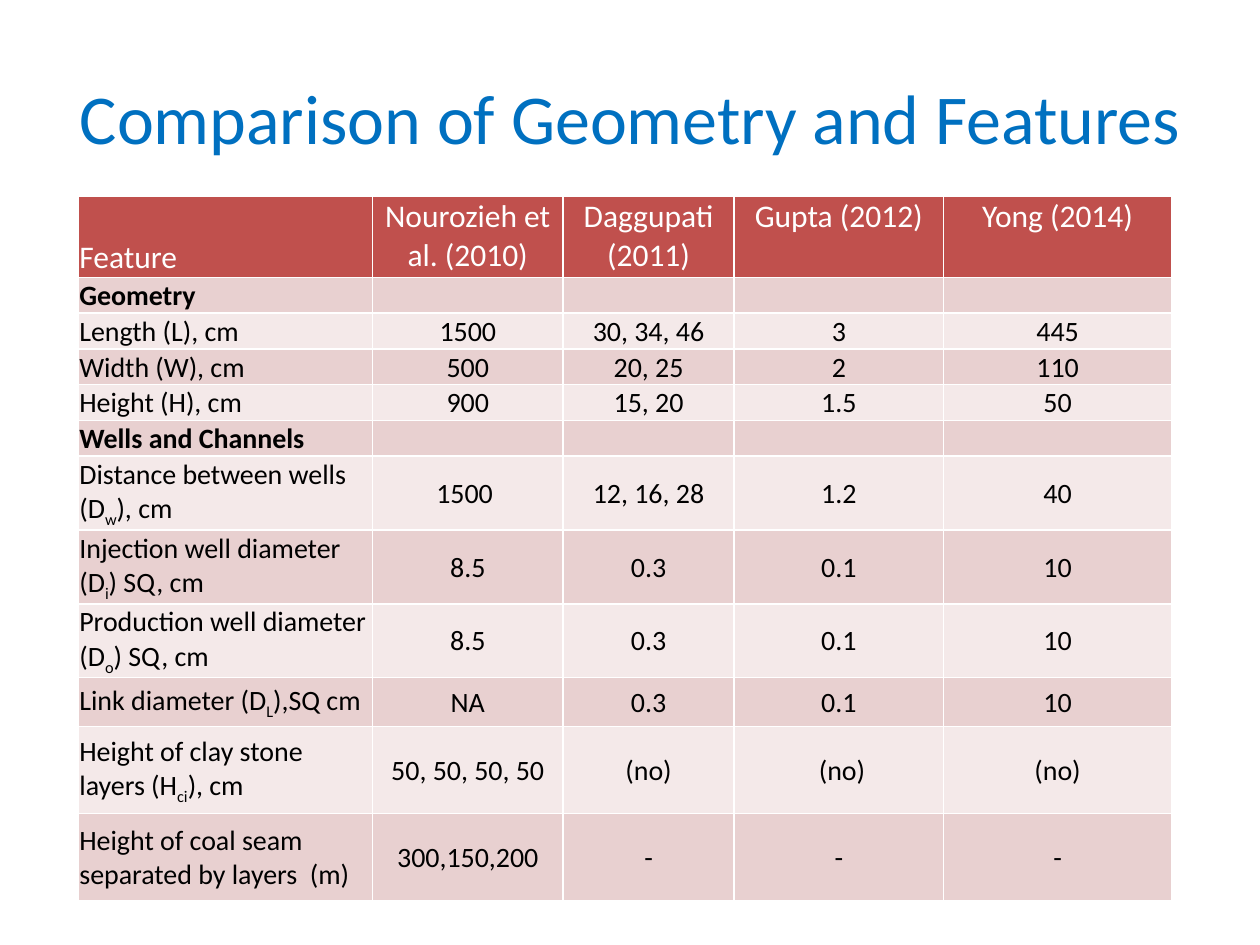
import pptx
import pptx.dml.color
import pptx.enum.text
import pptx.util
from lxml import etree
from pptx.oxml.ns import qn

Cm = pptx.util.Cm
ALIGN = pptx.enum.text.PP_ALIGN
ANCHOR = pptx.enum.text.MSO_ANCHOR

WHITE, BLACK, BLUE = "FFFFFF", "000000", "0070C0"
HEADER_FILL = "C0504D"
BAND_FILLS = ("E8D0D0", "F4E9E9")

COLUMN_WIDTHS = (5.94, 3.84, 3.45, 4.22, 4.6)
HEADER = ("Feature", "Nourozieh et al. (2010)", "Daggupati (2011)",
          "Gupta (2012)", "Yong (2014)")
SINGLE, DOUBLE, LINK, TALL = 0.71, 1.45, 0.99, 1.75

# Row height followed by the cells; text between bars is subscript
BODY = (
    (SINGLE, "Geometry", "", "", "", ""),
    (SINGLE, "Length (L), cm", "1500", "30, 34, 46", "3", "445"),
    (SINGLE, "Width (W), cm", "500", "20, 25", "2", "110"),
    (SINGLE, "Height (H), cm", "900", "15, 20", "1.5", "50"),
    (SINGLE, "Wells and Channels", "", "", "", ""),
    (DOUBLE, "Distance between wells (D|w|), cm", "1500 ", "12, 16, 28", "1.2", "40"),
    (DOUBLE, "Injection well diameter (D|i|) SQ, cm", "8.5", "0.3", "0.1", "10"),
    (DOUBLE, "Production well diameter (D|o|) SQ, cm", "8.5", "0.3", "0.1", "10"),
    (LINK, "Link diameter (D|L|),SQ cm", "NA", "0.3", "0.1", "10"),
    (TALL, "Height of clay stone layers (H|ci|), cm", "50, 50, 50, 50",
     "(no)", " (no)", "(no)"),
    (TALL, "Height of coal seam separated by layers  (m)", "300,150,200",
     "-", "-", "-"),
)


def rgb(color):
    return pptx.dml.color.RGBColor.from_string(color)


def write_text(frame, text, size=16, color=BLACK, bold=False, align=ALIGN.LEFT):
    """Fill the first paragraph, lowering the parts between bars."""
    paragraph = frame.paragraphs[0]
    paragraph.alignment = align
    if not text:
        # An empty cell still needs its text size to keep the row low
        etree.SubElement(paragraph._p, qn("a:endParaRPr"), sz=str(size * 100))
        return
    for index, part in enumerate(text.split("|")):
        run = paragraph.add_run()
        run.text = part
        run.font.name = "Calibri"
        run.font.size = pptx.util.Pt(size)
        run.font.bold = bold
        run.font.color.rgb = rgb(color)
        if index % 2:
            run.font._element.set("baseline", "-25000")


def add_borders(cell, color=WHITE, width=1):
    properties = cell._tc.get_or_add_tcPr()
    for side in ("lnL", "lnR", "lnT", "lnB"):
        line = etree.SubElement(properties, qn("a:" + side),
                                w=str(pptx.util.Pt(width)))
        fill = etree.SubElement(line, qn("a:solidFill"))
        etree.SubElement(fill, qn("a:srgbClr"), val=color)


def format_cell(cell, text, fill, anchor=ANCHOR.MIDDLE, **text_format):
    cell.margin_left = cell.margin_right = cell.margin_top = Cm(0.03)
    cell.margin_bottom = 0
    cell.vertical_anchor = anchor
    add_borders(cell)
    cell.fill.solid()
    cell.fill.fore_color.rgb = rgb(fill)
    write_text(cell.text_frame, text, **text_format)


def add_title(slide, text):
    title = slide.shapes.title
    title.left, title.top = Cm(1.27), Cm(0.76)
    title.width, title.height = Cm(22.86), Cm(3.18)
    title.text_frame.vertical_anchor = ANCHOR.MIDDLE
    write_text(title.text_frame, text, size=40, color=BLUE, align=ALIGN.CENTER)


def add_comparison_table(slide):
    heights = [1.63] + [row[0] for row in BODY]
    table = slide.shapes.add_table(
        len(heights), len(COLUMN_WIDTHS), Cm(1.57), Cm(3.96),
        Cm(sum(COLUMN_WIDTHS)), Cm(sum(heights))).table
    for column, width in zip(table.columns, COLUMN_WIDTHS):
        column.width = Cm(width)
    for row, height in zip(table.rows, heights):
        row.height = Cm(height)

    # Header row
    for index, text in enumerate(HEADER):
        format_cell(table.cell(0, index), text, HEADER_FILL,
                    anchor=ANCHOR.TOP if index else ANCHOR.BOTTOM,
                    size=18, color=WHITE,
                    align=ALIGN.CENTER if index else ALIGN.LEFT)

    # Banded body rows; a row without values is a bold section heading
    for row_index, (_, *texts) in enumerate(BODY):
        is_section = not any(texts[1:])
        for index, text in enumerate(texts):
            format_cell(table.cell(row_index + 1, index), text,
                        BAND_FILLS[row_index % 2], bold=is_section,
                        align=ALIGN.CENTER if index else ALIGN.LEFT)


def main():
    presentation = pptx.Presentation()
    presentation.slide_width, presentation.slide_height = Cm(25.4), Cm(19.05)
    slide = presentation.slides.add_slide(presentation.slide_layouts[5])
    add_title(slide, "Comparison of Geometry and Features")
    add_comparison_table(slide)
    presentation.save("out.pptx")


if __name__ == "__main__":
    main()
